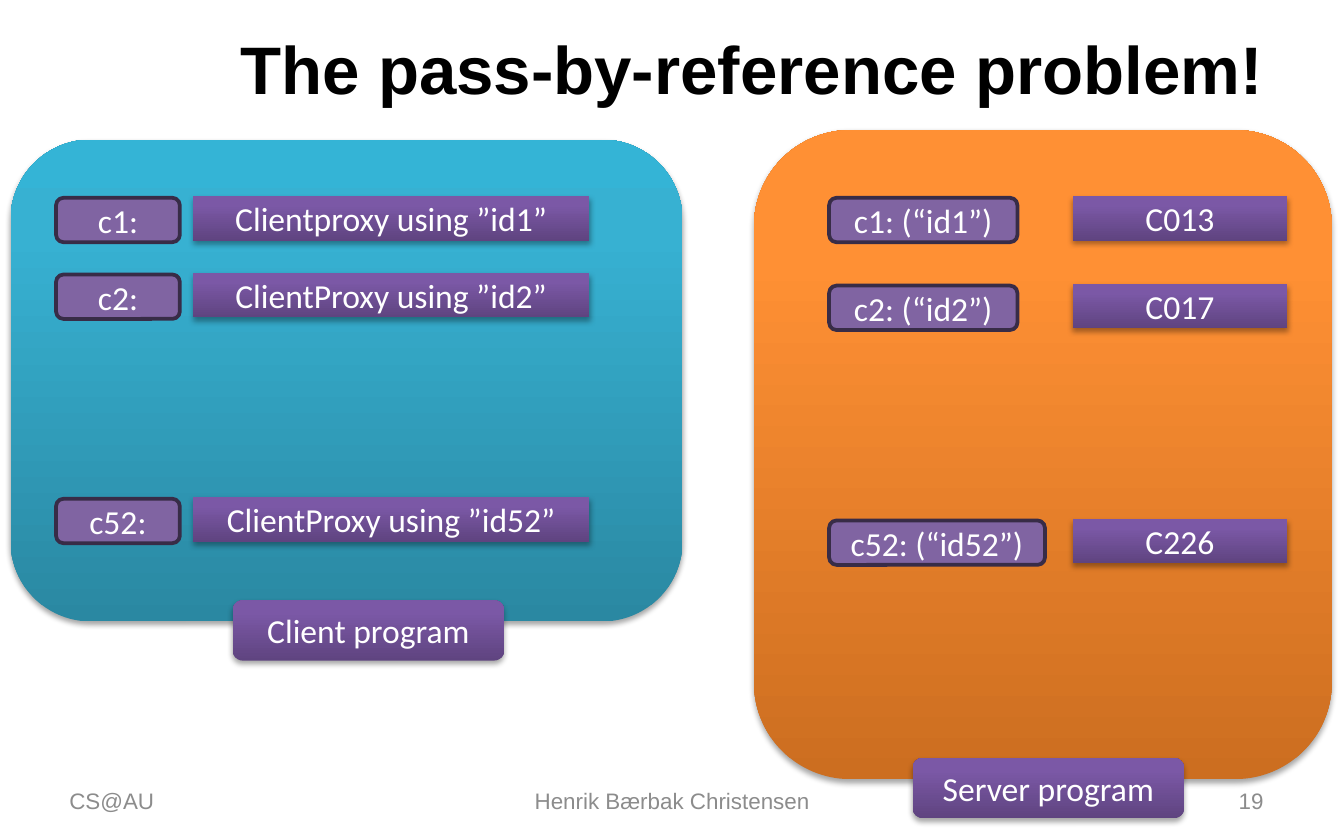
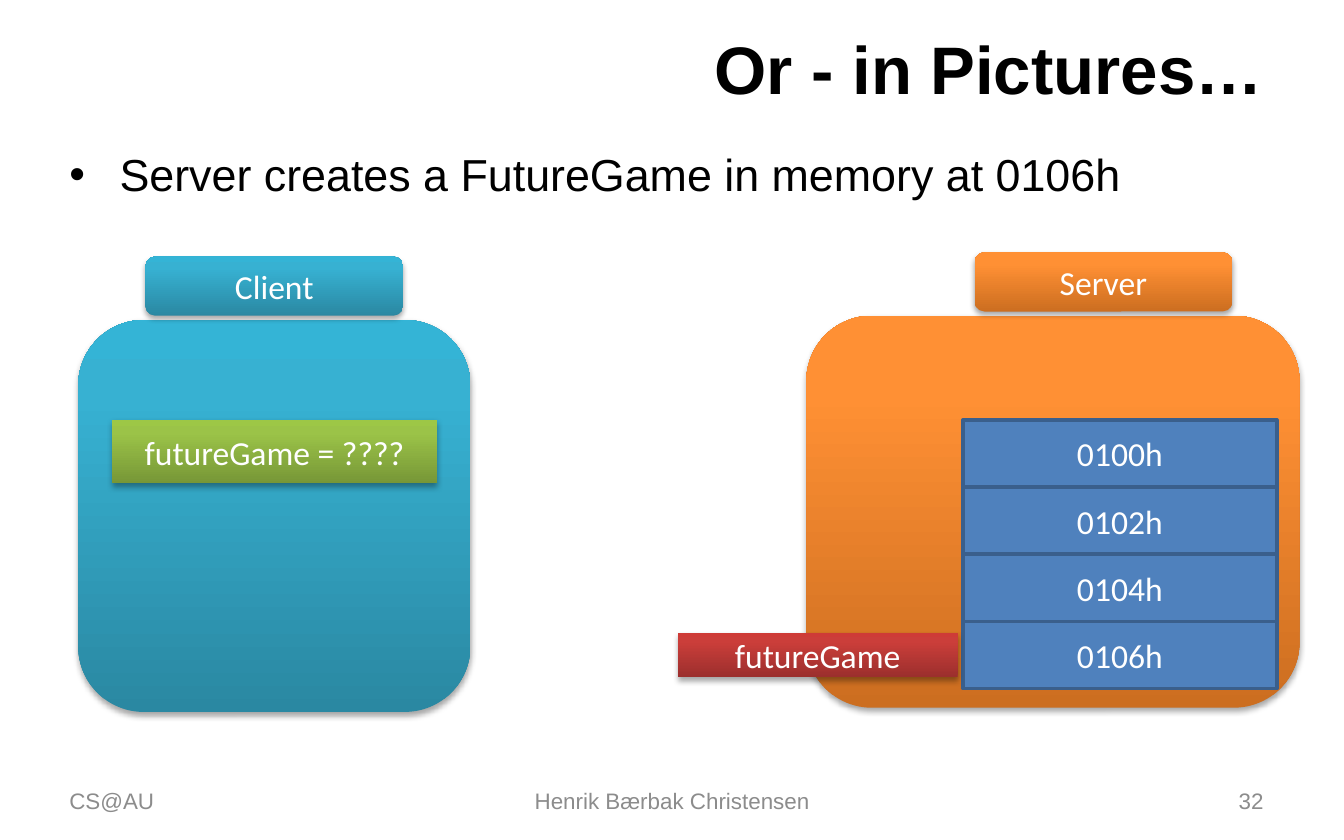
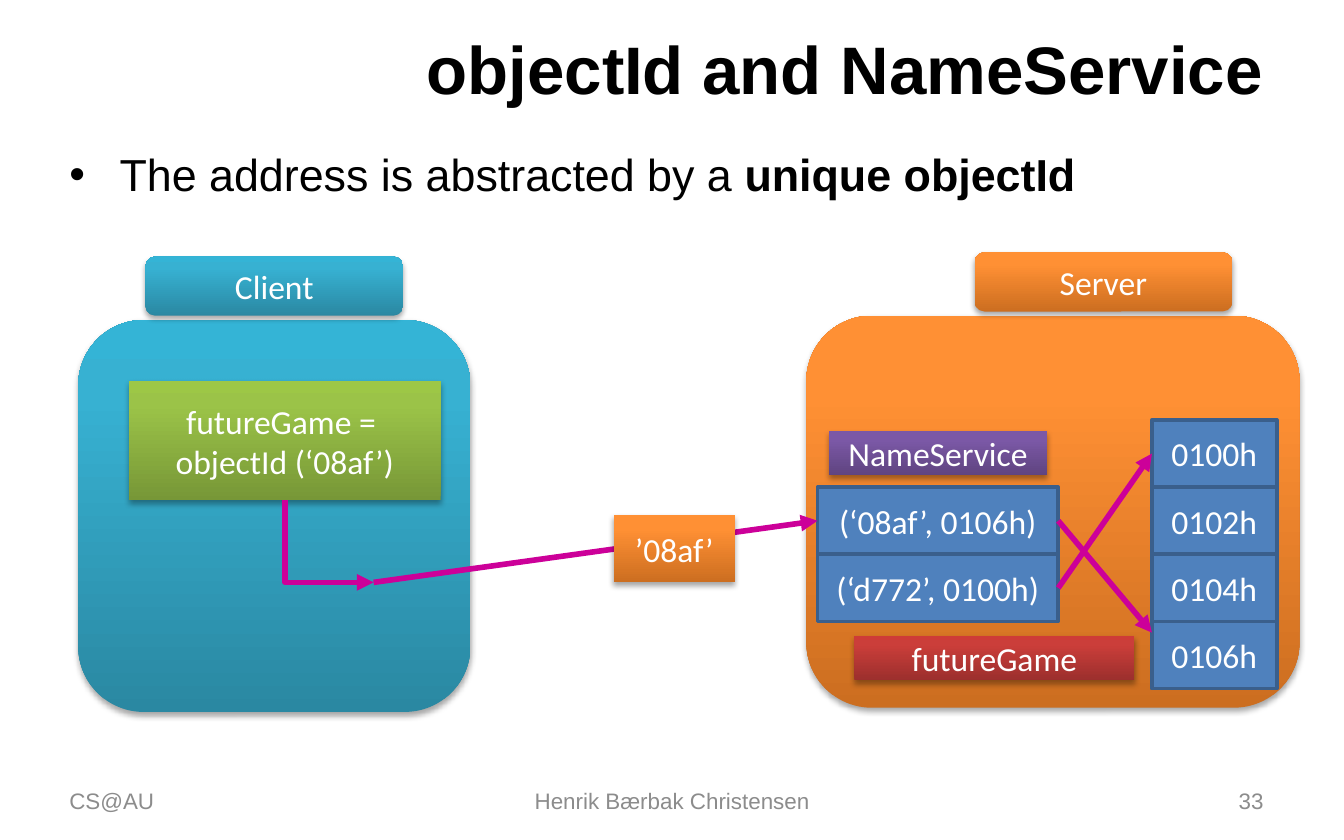
import copy
import dataclasses

import lxml.etree
import pptx
import pptx.dml.color
import pptx.enum.shapes
import pptx.enum.text
import pptx.oxml.ns
import pptx.util

Cm = pptx.util.Cm
Pt = pptx.util.Pt
qn = pptx.oxml.ns.qn
Align = pptx.enum.text.PP_ALIGN
Anchor = pptx.enum.text.MSO_ANCHOR
Shape = pptx.enum.shapes.MSO_SHAPE
Connector = pptx.enum.shapes.MSO_CONNECTOR
LEFT, RIGHT = 1, 3


@dataclasses.dataclass(frozen=True)
class Theme:
    heading_font: str = "Arial"
    diagram_font: str = "Calibri"
    title_size: int = 36
    body_size: int = 24
    diagram_size: int = 18
    footer_size: int = 12
    ink: str = "000000"
    paper: str = "FFFFFF"
    footer: str = "8C8C8C"
    arrow: str = "CC0099"
    arrow_width: float = 3
    outline_width: float = 2
    gradient_positions: tuple = (0, 0.8, 1)
    orange: tuple = ("CC6E20", "FF9034", "FF9136")
    teal: tuple = ("2A88A2", "37B1D2", "34B4D6")
    purple: tuple = ("5F4480", "7B58A6", "7C57A8")
    green: tuple = ("779737", "9BC348", "9DC746")
    red: tuple = ("9C2F2D", "CB3E3A", "CE3B37")
    key: tuple = ("8064A2", "382C47")
    cell: tuple = ("4F81BD", "3A5F8C")


@dataclasses.dataclass(frozen=True)
class Box:
    left: float
    top: float
    width: float
    height: float

    def inner(self, left, top, width, height):
        return Box(self.left + left, self.top + top, width, height)

    def lengths(self):
        return [Cm(value) for value in dataclasses.astuple(self)]


THEME = Theme()
SLIDE = Box(0, 0, 25.4, 15.88)
TITLE = Box(1.27, 0.46, 22.86, 1.65)
BODY = Box(1.06, 2.65, 23.07, 11.99)
FOOTER = Box(1.06, 14.71, 23.07, 0.84)
CLIENT = Box(1.48, 6.05, 7.41, 7.41)
SERVER = Box(15.24, 5.97, 9.32, 7.41)
ADDRESSES = ["0100h", "0102h", "0104h", "0106h"]
TAG_HEIGHT = 0.84


def rgb(colour):
    return pptx.dml.color.RGBColor.from_string(colour)


def format_runs(paragraph, font, size, colour, bold=None):
    for run in paragraph.runs:
        run.font.name = font
        run.font.size = Pt(size)
        run.font.color.rgb = rgb(colour)
        if bold is not None:
            run.font.bold = bold


def add_block(shapes, kind, box, text):
    shape = shapes.add_shape(kind, *box.lengths())
    shape.shadow.inherit = False
    if text:
        shape.text_frame.text = text
        shape.text_frame.vertical_anchor = Anchor.MIDDLE
        paragraph = shape.text_frame.paragraphs[0]
        paragraph.alignment = Align.CENTER
        format_runs(paragraph, THEME.diagram_font, THEME.diagram_size, THEME.paper)
    return shape


def add_glossy(shapes, kind, box, gradient, text=""):
    shape = add_block(shapes, kind, box, text)
    shape.line.fill.background()
    shape.fill.gradient()
    shape.fill.gradient_angle = 90
    properties = shape._element.spPr
    stop_list = properties.find(".//" + qn("a:gsLst"))
    stop_list.append(copy.deepcopy(stop_list[-1]))
    stops = zip(shape.fill.gradient_stops, THEME.gradient_positions, gradient)
    for stop, position, colour in stops:
        stop.position = position
        stop.color.rgb = rgb(colour)
    shadow = lxml.etree.SubElement(
        properties.find(qn("a:effectLst")), qn("a:outerShdw"),
        blurRad=str(Pt(3.1)), dist=str(Pt(1.8)), dir="5400000", rotWithShape="0")
    tint = lxml.etree.SubElement(shadow, qn("a:srgbClr"), val=THEME.ink)
    lxml.etree.SubElement(tint, qn("a:alpha"), val="35000")


def add_outlined(shapes, kind, box, colours, text):
    shape = add_block(shapes, kind, box, text)
    fill, outline = colours
    shape.fill.solid()
    shape.fill.fore_color.rgb = rgb(fill)
    shape.line.color.rgb = rgb(outline)
    shape.line.width = Pt(THEME.outline_width)
    return shape


def add_arrow(slide, begin, end, kind=Connector.STRAIGHT):
    points = [Cm(value) for value in (*begin, *end)]
    connector = slide.shapes.add_connector(kind, *points)
    connector.line.color.rgb = rgb(THEME.arrow)
    connector.line.width = Pt(THEME.arrow_width)
    properties = connector._element.spPr
    lxml.etree.SubElement(properties.find(qn("a:ln")), qn("a:tailEnd"), type="triangle")
    lxml.etree.SubElement(properties, qn("a:effectLst"))
    return connector


def add_down_right_arrow(slide, begin, end):
    centre_x, centre_y = (begin[0] + end[0]) / 2, (begin[1] + end[1]) / 2
    half_width, half_height = (end[0] - begin[0]) / 2, (end[1] - begin[1]) / 2
    connector = add_arrow(
        slide,
        (centre_x + half_height, centre_y - half_width),
        (centre_x - half_height, centre_y + half_width),
        Connector.ELBOW)
    properties = connector._element.spPr
    properties.find(qn("a:prstGeom")).set("prst", "bentConnector2")
    properties.find(qn("a:xfrm")).set("rot", "16200000")


def add_title(slide, box, text):
    title = slide.shapes.title
    title.left, title.top, title.width, title.height = box.lengths()
    title.text_frame.text = text
    title.text_frame.vertical_anchor = Anchor.MIDDLE
    paragraph = title.text_frame.paragraphs[0]
    paragraph.alignment = Align.RIGHT
    format_runs(paragraph, THEME.heading_font, THEME.title_size, THEME.ink, True)


def add_footer(slide, box, number):
    entries = [
        (0, 5.93, "CS@AU", Align.LEFT),
        (7.62, 8.05, "Henrik Bærbak Christensen", Align.CENTER),
        (17.14, 5.93, str(number), Align.RIGHT),
    ]
    for left, width, text, alignment in entries:
        entry = slide.shapes.add_textbox(*box.inner(left, 0, width, box.height).lengths())
        entry.text_frame.word_wrap = True
        entry.text_frame.vertical_anchor = Anchor.MIDDLE
        paragraph = entry.text_frame.paragraphs[0]
        paragraph.text = text
        paragraph.alignment = alignment
        format_runs(paragraph, THEME.heading_font, THEME.footer_size, THEME.footer)


def add_bullet(slide, box, text, emphasis=""):
    body = slide.shapes.add_textbox(*box.lengths())
    body.text_frame.word_wrap = True
    paragraph = body.text_frame.paragraphs[0]
    properties = paragraph._p.get_or_add_pPr()
    properties.set("marL", str(Cm(0.95)))
    properties.set("indent", str(-Cm(0.95)))
    lxml.etree.SubElement(properties, qn("a:buFont"), typeface=THEME.heading_font)
    lxml.etree.SubElement(properties, qn("a:buChar"), char="•")
    paragraph.text = text
    if emphasis:
        run = paragraph.add_run()
        run.text = emphasis
        run.font.bold = True
    format_runs(paragraph, THEME.heading_font, THEME.body_size, THEME.ink)


def add_slide(presentation, title, number):
    slide = presentation.slides.add_slide(presentation.slide_layouts[5])
    add_title(slide, TITLE, title)
    add_footer(slide, FOOTER, number)
    return slide


def add_program(slide, box, gradient, name, name_left):
    add_glossy(slide.shapes, Shape.ROUNDED_RECTANGLE, box, gradient)
    name_box = box.inner(name_left, box.height - 0.4, 5.13, 1.14)
    add_glossy(slide.shapes, Shape.ROUNDED_RECTANGLE, name_box, THEME.purple, name)


def add_entry(slide, box, key, key_width, value, value_left):
    shapes = slide.shapes.add_group_shape().shapes
    value_box = box.inner(value_left, 0, box.width - value_left, box.height)
    add_glossy(shapes, Shape.RECTANGLE, value_box, THEME.purple, value)
    key_box = box.inner(0, 0.03, key_width, box.height)
    add_outlined(shapes, Shape.ROUNDED_RECTANGLE, key_box, THEME.key, key)


def add_machine(slide, box, gradient, name, name_left):
    add_glossy(slide.shapes, Shape.ROUNDED_RECTANGLE, box, gradient)
    name_box = box.inner(name_left, -1.2, 4.87, 1.12)
    add_glossy(slide.shapes, Shape.ROUNDED_RECTANGLE, name_box, gradient, name)


def add_cells(slide, box, texts):
    height = box.height / len(texts)
    return [
        add_outlined(slide.shapes, Shape.RECTANGLE,
                     box.inner(0, row * height, box.width, height), THEME.cell, text)
        for row, text in enumerate(texts)
    ]


def add_tag(slide, box, gradient, text):
    add_glossy(slide.shapes, Shape.RECTANGLE, box, gradient, text)


def add_machine_slide(presentation, title, number, text, emphasis=""):
    slide = add_slide(presentation, title, number)
    add_bullet(slide, BODY, text, emphasis)
    add_machine(slide, SERVER, THEME.orange, "Server", 3.18)
    add_machine(slide, CLIENT, THEME.teal, "Client", 1.27)
    return slide


def build_reference_problem(presentation):
    slide = add_slide(presentation, "The pass-by-reference problem!", 19)
    server = Box(14.25, 2.46, 10.92, 12.27)
    client = Box(0.2, 2.64, 12.7, 9.11)
    add_program(slide, server, THEME.orange, "Server program", 3)
    add_program(slide, client, THEME.teal, "Client program", 4.2)
    proxies = [
        (1.07, "c1:", "Clientproxy using ”id1”"),
        (2.52, "c2:", "ClientProxy using ”id2”"),
        (6.76, "c52:", "ClientProxy using ”id52”"),
    ]
    for top, key, value in proxies:
        add_entry(slide, client.inner(0.86, top, 10.08, TAG_HEIGHT), key, 2.34, value, 2.59)
    references = [
        (1.25, "c1: (“id1”)", 3.56, "C013"),
        (2.91, "c2: (“id2”)", 3.56, "C017"),
        (7.35, "c52: (“id52”)", 4.08, "C226"),
    ]
    for top, key, key_width, value in references:
        add_entry(slide, server.inner(1.42, top, 8.66, TAG_HEIGHT), key, key_width, value, 4.6)


def build_in_pictures(presentation):
    slide = add_machine_slide(presentation, "Or - in Pictures…", 32,
                              "Server creates a FutureGame in memory at 0106h")
    add_cells(slide, SERVER.inner(2.96, 1.97, 5.93, 5.08), ADDRESSES)
    add_tag(slide, CLIENT.inner(0.64, 1.89, 6.14, 1.2), THEME.green, "futureGame = ????")
    add_tag(slide, SERVER.inner(-2.43, 5.99, 5.29, TAG_HEIGHT), THEME.red, "futureGame")


def build_name_service(presentation):
    slide = add_machine_slide(presentation, "objectId and NameService", 33,
                              "The address is abstracted by a ", "unique objectId")
    memory_box = SERVER.inner(6.53, 1.97, 2.36, 5.08)
    memory = add_cells(slide, memory_box, ADDRESSES)
    names_box = SERVER.inner(0.21, 3.24, 4.55, 2.54)
    names = add_cells(slide, names_box, ["(‘08af’, 0106h)", "(‘d772’, 0100h)"])
    game_box = CLIENT.inner(0.96, 1.16, 5.89, 2.25)
    add_tag(slide, game_box, THEME.green, "futureGame = \vobjectId (‘08af’)")

    turn = (7.06, 11.01)
    game_bottom = (game_box.left + game_box.width / 2, game_box.top + game_box.height)
    add_down_right_arrow(slide, game_bottom, turn)
    request = add_arrow(slide, turn, (names_box.left, names_box.top))
    request.end_connect(names[0], LEFT)
    names_right = (names_box.left + names_box.width, names_box.top)
    found = add_arrow(slide, names_right, (memory_box.left, memory_box.top + 4.02))
    found.begin_connect(names[0], RIGHT)
    other = add_arrow(slide, names_right, (memory_box.left, memory_box.top))
    other.begin_connect(names[1], RIGHT)
    other.end_connect(memory[0], LEFT)

    add_tag(slide, SLIDE.inner(11.6, 9.74, 2.29, 1.27), THEME.orange, "’08af’")
    add_tag(slide, SERVER.inner(0.91, 6.05, 5.29, TAG_HEIGHT), THEME.red, "futureGame")
    add_tag(slide, SERVER.inner(0.43, 2.18, 4.12, TAG_HEIGHT), THEME.purple, "NameService")


def main():
    presentation = pptx.Presentation()
    presentation.slide_width = Cm(SLIDE.width)
    presentation.slide_height = Cm(SLIDE.height)
    build_reference_problem(presentation)
    build_in_pictures(presentation)
    build_name_service(presentation)
    presentation.save("out.pptx")


if __name__ == "__main__":
    main()
